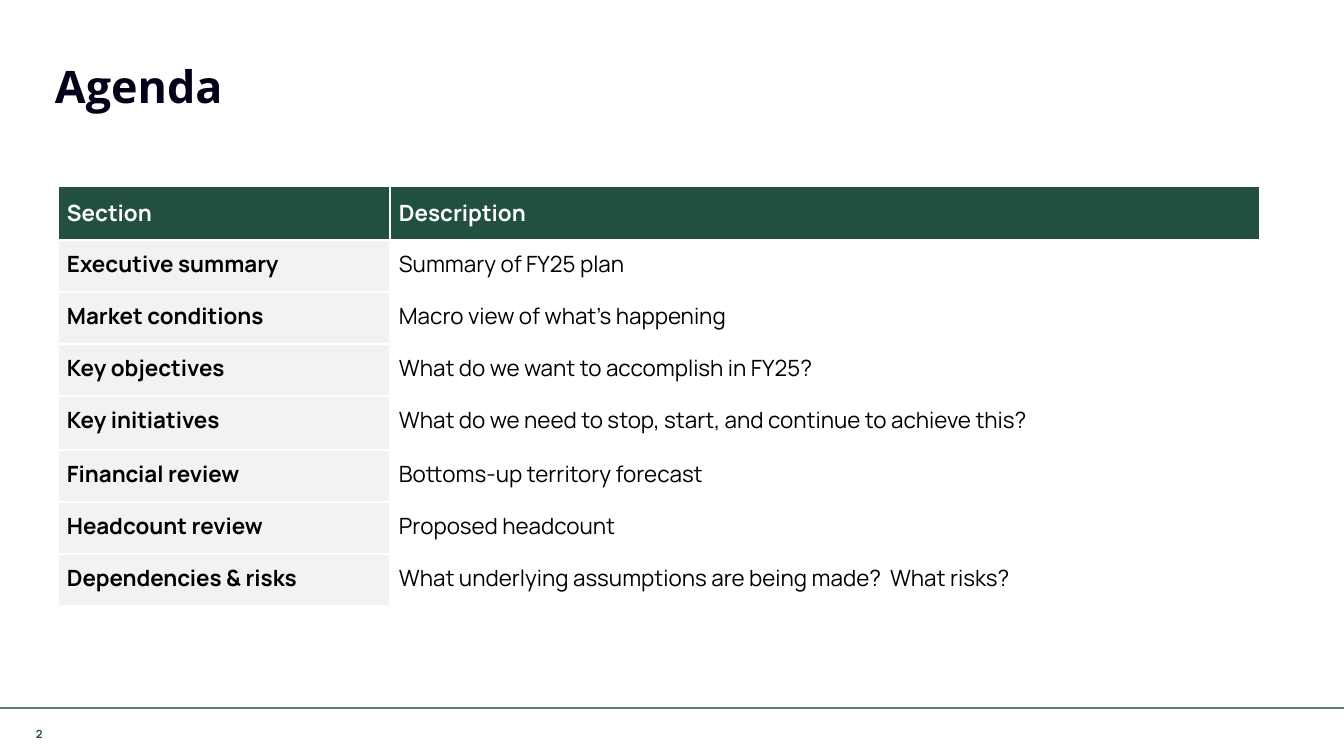
from lxml.etree import SubElement
from pptx import Presentation
from pptx.dml.color import RGBColor
from pptx.enum.shapes import MSO_CONNECTOR
from pptx.enum.text import MSO_ANCHOR, MSO_AUTO_SIZE, PP_ALIGN
from pptx.oxml.ns import qn
from pptx.util import Emu, Pt

GREEN = RGBColor(0x21, 0x4F, 0x40)
RULE = RGBColor(0x52, 0x85, 0x75)
NAVY = RGBColor(0x05, 0x00, 0x19)
GREY = RGBColor(0xF2, 0xF2, 0xF2)
WHITE = RGBColor(0xFF, 0xFF, 0xFF)
BLACK = RGBColor(0x00, 0x00, 0x00)

HEADER = ("Section", "Description")
AGENDA = [
    ("Executive summary", "Summary of FY25 plan"),
    ("Market conditions", "Macro view of what’s happening"),
    ("Key objectives", "What do we want to accomplish in FY25?"),
    ("Key initiatives", "What do we need to stop, start, and continue to achieve this?"),
    ("Financial review", "Bottoms-up territory forecast"),
    ("Headcount review", "Proposed headcount"),
    ("Dependencies & risks", "What underlying assumptions are being made?  What risks?"),
]
COLUMNS = (332, 870)
ROWS = (54, 52, 52, 52, 54, 52, 52, 52)


def px(n):
    return Emu(round(n * 914400 / 134.4))


def write(tf, text, size=12, font="Manrope", color=BLACK, bold=False, spacing=None):
    p = tf.paragraphs[0]
    p.alignment = PP_ALIGN.LEFT
    p.line_spacing = spacing
    r = p.add_run()
    r.text = text
    r.font.size = Pt(size)
    r.font.name = font
    r.font.bold = bold
    r.font.color.rgb = color


def set_margins(item, x, y):
    item.margin_left = item.margin_right = px(x)
    item.margin_top = item.margin_bottom = px(y)


class Deck:
    heading_font = "Open Sans"

    def __init__(self, width, height):
        self.prs = Presentation()
        self.prs.slide_width, self.prs.slide_height = px(width), px(height)
        self.s = self.prs.slides.add_slide(self.prs.slide_layouts[5])

    def title(self, text, x, y, w, h):
        sp = self.s.shapes.title
        sp.left, sp.top, sp.width, sp.height = map(px, (x, y, w, h))
        tf = sp.text_frame
        tf.word_wrap = True
        tf.auto_size = MSO_AUTO_SIZE.NONE
        tf.vertical_anchor = MSO_ANCHOR.MIDDLE
        set_margins(tf, 9, 5)
        write(tf, text, size=24, font=self.heading_font, color=NAVY, bold=True, spacing=0.9)

    def page_number(self, text, x, y, w, h):
        tf = self.s.shapes.add_textbox(*map(px, (x, y, w, h))).text_frame
        tf.vertical_anchor = MSO_ANCHOR.MIDDLE
        set_margins(tf, 5, 5)
        write(tf, text, size=6, color=GREEN, bold=True)

    def rule(self, x1, y1, x2, y2):
        line = self.s.shapes.add_connector(MSO_CONNECTOR.STRAIGHT, *map(px, (x1, y1, x2, y2)))
        line.line.color.rgb = RULE
        line.line.width = Pt(1)
        SubElement(line._element.spPr, qn("a:effectLst"))

    def cell(self, cell, text, fill=None, anchor=MSO_ANCHOR.TOP, **style):
        set_margins(cell, 9, 9)
        cell.vertical_anchor = anchor
        write(cell.text_frame, text, **style)
        tcPr = cell._tc.get_or_add_tcPr()
        for side in ("lnL", "lnR", "lnT", "lnB"):
            ln = SubElement(tcPr, qn(f"a:{side}"), w=str(Pt(1)))
            SubElement(SubElement(ln, qn("a:solidFill")), qn("a:srgbClr"), val=str(WHITE))
        if fill is None:
            cell.fill.background()
        else:
            cell.fill.solid()
            cell.fill.fore_color.rgb = fill

    def table(self, header, records, x, y, columns, rows):
        frame = self.s.shapes.add_table(
            len(rows), len(columns), px(x), px(y), px(sum(columns)), px(sum(rows))
        )
        table = frame.table
        table.horz_banding = False
        for column, width in zip(table.columns, columns):
            column.width = px(width)
        for row, height in zip(table.rows, rows):
            row.height = px(height)
        for j, text in enumerate(header):
            self.cell(table.cell(0, j), text, GREEN, MSO_ANCHOR.MIDDLE, color=WHITE, bold=True)
        for i, (section, description) in enumerate(records, 1):
            self.cell(table.cell(i, 0), section, GREY, bold=True)
            self.cell(table.cell(i, 1), description)


def main():
    deck = Deck(1344, 756)
    deck.page_number("2", 31, 722, 23, 24)
    deck.rule(0, 708, 1344, 708)
    deck.title("Agenda", 46, 59, 1158, 59)
    deck.table(HEADER, AGENDA, 58, 186, COLUMNS, ROWS)
    deck.prs.save("out.pptx")


if __name__ == "__main__":
    main()
